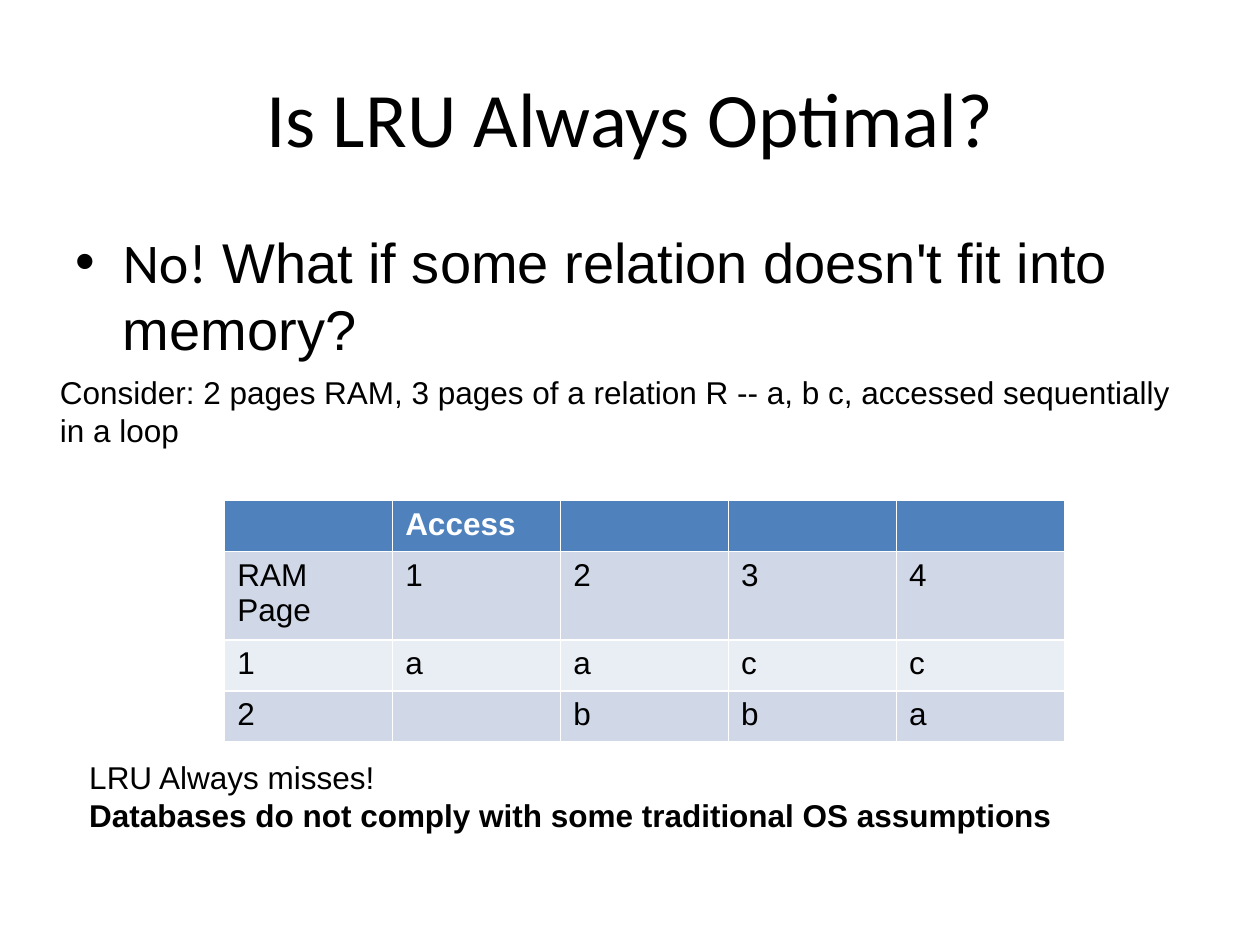
from dataclasses import dataclass

from pptx import Presentation
from pptx.dml.color import RGBColor as RGB
from pptx.enum.text import MSO_ANCHOR as Anchor, PP_ALIGN as Align
from pptx.util import Cm, Pt


@dataclass(frozen=True)
class Theme:
    heading: str = "Calibri"
    text: str = "Arial"
    title_size: int = 44
    body_size: int = 32
    note_size: int = 18
    ink: str = "000000"
    white: str = "FFFFFF"
    header: str = "4F81BD"
    bands: tuple = ("D0D8E8", "E9EDF4")


T = Theme()


def style(font, name, size, color=T.ink, bold=False):
    font.name, font.size, font.bold = name, Pt(size), bold
    font.color.rgb = RGB.from_string(color)


def place(sp, left, top, width, height):
    sp.left, sp.top, sp.width, sp.height = map(Cm, (left, top, width, height))


prs = Presentation()
prs.slide_width, prs.slide_height = Cm(25.4), Cm(19.05)
s = prs.slides.add_slide(prs.slide_layouts[1])

title = s.shapes.title
place(title, 1.27, 0.76, 22.86, 3.18)
title.text_frame.text = "Is LRU Always Optimal?"
title.text_frame.vertical_anchor = Anchor.MIDDLE
p = title.text_frame.paragraphs[0]
p.alignment = Align.CENTER
style(p.font, T.heading, T.title_size)

body = s.placeholders[1]
place(body, 1.27, 4.45, 22.86, 12.57)
p = body.text_frame.paragraphs[0]
for text, name in (
    ("No!", T.heading),
    (" What if some relation doesn't fit into memory?", T.text),
):
    r = p.add_run()
    r.text = text
    style(r.font, name, T.body_size)

notes = [
    ((0.96, 7.39, 23.47, 3.33), [
        ("Consider: 2 pages RAM, 3 pages of a relation R -- a, b c, "
         "accessed sequentially in a loop", False),
    ]),
    ((1.55, 15.16, 21.36, 1.8), [
        ("LRU Always misses!", False),
        ("Databases do not comply with some traditional OS assumptions", True),
    ]),
]
for box, lines in notes:
    tf = s.shapes.add_textbox(*map(Cm, box)).text_frame
    tf.word_wrap = True
    tf.text = "\n".join(text for text, _ in lines)
    for p, (_, bold) in zip(tf.paragraphs, lines):
        style(p.font, T.text, T.note_size, bold=bold)

rows = [
    ["", "Access", "", "", ""],
    ["RAM Page", "1", "2", "3", "4"],
    ["1", "a", "a", "c", "c"],
    ["2", "", "b", "b", "a"],
]
table = s.shapes.add_table(
    len(rows), len(rows[0]), Cm(4.53), Cm(10.09), Cm(16.93), Cm(4.12)
).table
for i, row in enumerate(rows):
    is_header = i == 0
    fill = T.header if is_header else T.bands[(i - 1) % 2]
    for j, text in enumerate(row):
        cell = table.cell(i, j)
        cell.text = text
        cell.fill.solid()
        cell.fill.fore_color.rgb = RGB.from_string(fill)
        style(cell.text_frame.paragraphs[0].font, T.text, T.note_size,
              T.white if is_header else T.ink, is_header)

prs.save("out.pptx")
